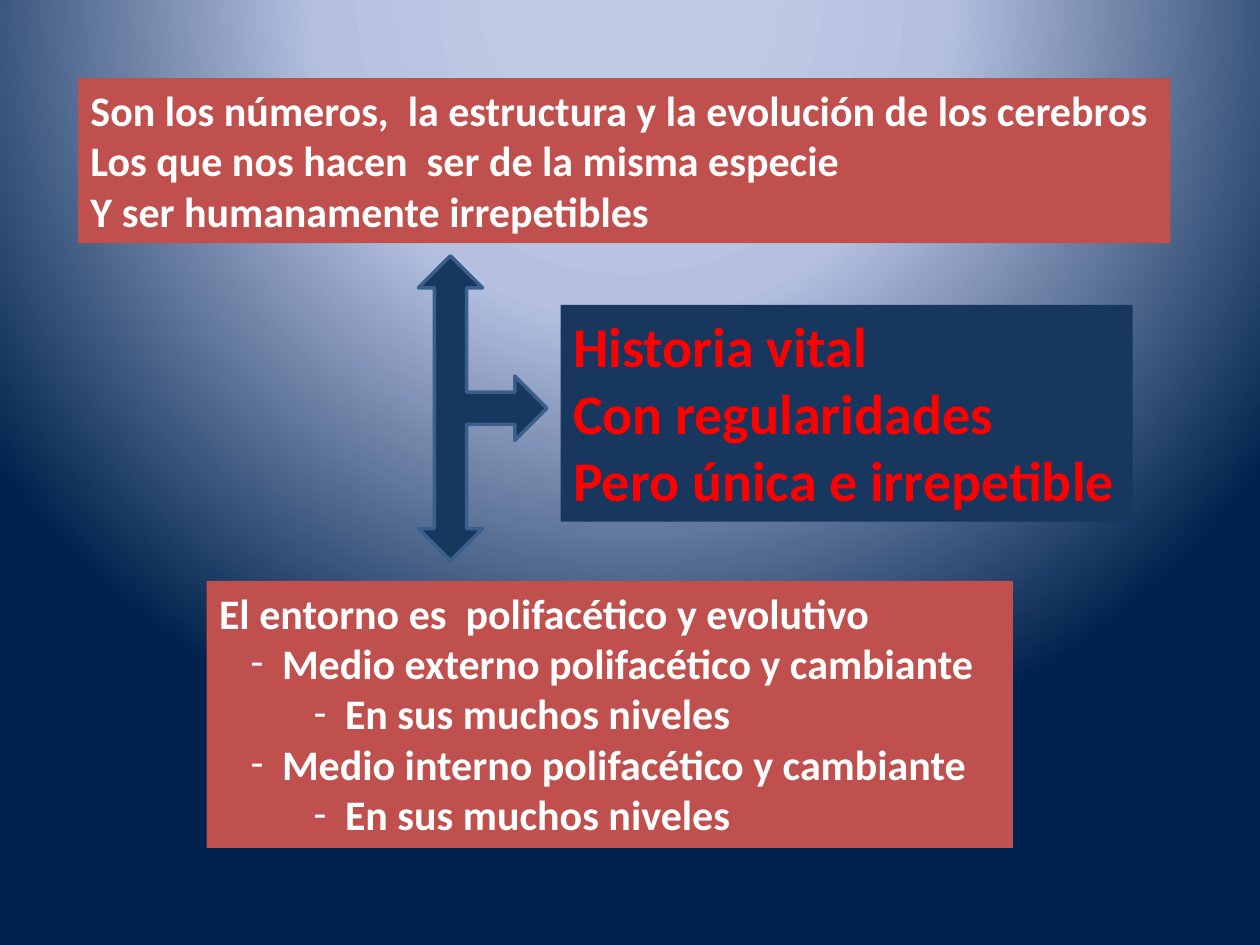
"""Build a slide linking brains, environment and life history."""
from pptx import Presentation
from pptx.dml.color import RGBColor
from pptx.enum.shapes import MSO_SHAPE
from pptx.enum.text import MSO_ANCHOR, MSO_AUTO_SIZE, PP_ALIGN
from pptx.oxml import parse_xml
from pptx.oxml.ns import nsdecls, qn
from pptx.util import Inches, Pt

COLORS = {
    "glow": "BFC9E5",
    "haze": "B5C0E0",
    "night": "00234D",
    "brick": "C0504D",
    "navy": "17375E",
    "outline": "3A5F8C",
    "white": "FFFFFF",
    "red": "FF0000",
}
BRAINS = [
    ("Son los números,  la estructura y la evolución de los cerebros", 0),
    ("Los que nos hacen  ser de la misma especie", 0),
    ("Y ser humanamente irrepetibles", 0),
]
ENVIRONMENT = [
    ("El entorno es  polifacético y evolutivo", 0),
    ("Medio externo polifacético y cambiante", 1),
    ("En sus muchos niveles", 2),
    ("Medio interno polifacético y cambiante", 1),
    ("En sus muchos niveles", 2),
]
HISTORY = [
    ("Historia vital", 0),
    ("Con regularidades", 0),
    ("Pero única e irrepetible", 0),
]


def color(name):
    return RGBColor.from_string(COLORS[name])


def set_background(slide):
    slide.background.fill.gradient()
    gradient = slide.element.find(".//" + qn("a:gradFill"))
    for child in list(gradient):
        gradient.remove(child)
    stops = ""
    for name, position, alpha in (("glow", 14, 84), ("haze", 40, 100), ("night", 100, 100)):
        stops += (
            f'<a:gs pos="{position * 1000}"><a:srgbClr val="{COLORS[name]}">'
            f'<a:alpha val="{alpha * 1000}"/></a:srgbClr></a:gs>'
        )
    gradient.append(parse_xml(f'<a:gsLst {nsdecls("a")}>{stops}</a:gsLst>'))
    gradient.append(parse_xml(
        f'<a:path {nsdecls("a")} path="circle">'
        '<a:fillToRect l="50000" t="-80000" r="50000" b="180000"/></a:path>'
    ))


def add_dash(paragraph, level):
    paragraph.level = level
    properties = paragraph._p.get_or_add_pPr()
    properties.set("marL", str(Inches(0.5 * level)))
    properties.set("indent", str(Inches(-0.25)))
    properties.append(parse_xml(f'<a:buFont {nsdecls("a")} typeface="Calibri"/>'))
    properties.append(parse_xml(f'<a:buChar {nsdecls("a")} char="-"/>'))


def add_panel(slide, box, lines, fill, text_color, size, alignment=PP_ALIGN.LEFT):
    shape = slide.shapes.add_textbox(*map(Inches, box))
    shape.fill.solid()
    shape.fill.fore_color.rgb = color(fill)
    text_frame = shape.text_frame
    text_frame.word_wrap = False
    text_frame.auto_size = MSO_AUTO_SIZE.SHAPE_TO_FIT_TEXT
    text_frame.vertical_anchor = MSO_ANCHOR.TOP
    text_frame.text = "\n".join(text for text, level in lines)
    for paragraph, (text, level) in zip(text_frame.paragraphs, lines):
        paragraph.alignment = alignment
        if level:
            add_dash(paragraph, level)
        for run in paragraph.runs:
            run.font.name = "Calibri"
            run.font.size = Pt(size)
            run.font.bold = True
            run.font.color.rgb = color(text_color)


def add_three_way_arrow(slide, box):
    shape = slide.shapes.add_shape(MSO_SHAPE.LEFT_RIGHT_UP_ARROW, *map(Inches, box))
    shape.rotation = 90
    shape.shadow.inherit = False
    shape.fill.solid()
    shape.fill.fore_color.rgb = color("navy")
    shape.line.color.rgb = color("outline")
    shape.line.width = Pt(2)


def main():
    presentation = Presentation()
    presentation.slide_width = Inches(10)
    presentation.slide_height = Inches(7.5)
    slide = presentation.slides.add_slide(presentation.slide_layouts[6])
    set_background(slide)
    add_panel(slide, (0.62, 0.62, 8.67, 1.31), BRAINS, "brick", "white", 24, PP_ALIGN.JUSTIFY)
    add_panel(slide, (1.64, 4.61, 6.4, 2.12), ENVIRONMENT, "brick", "white", 24)
    add_three_way_arrow(slide, (2.62, 2.73, 2.42, 1.02))
    add_panel(slide, (4.45, 2.42, 4.54, 1.72), HISTORY, "navy", "red", 32)
    presentation.save("out.pptx")


if __name__ == "__main__":
    main()
